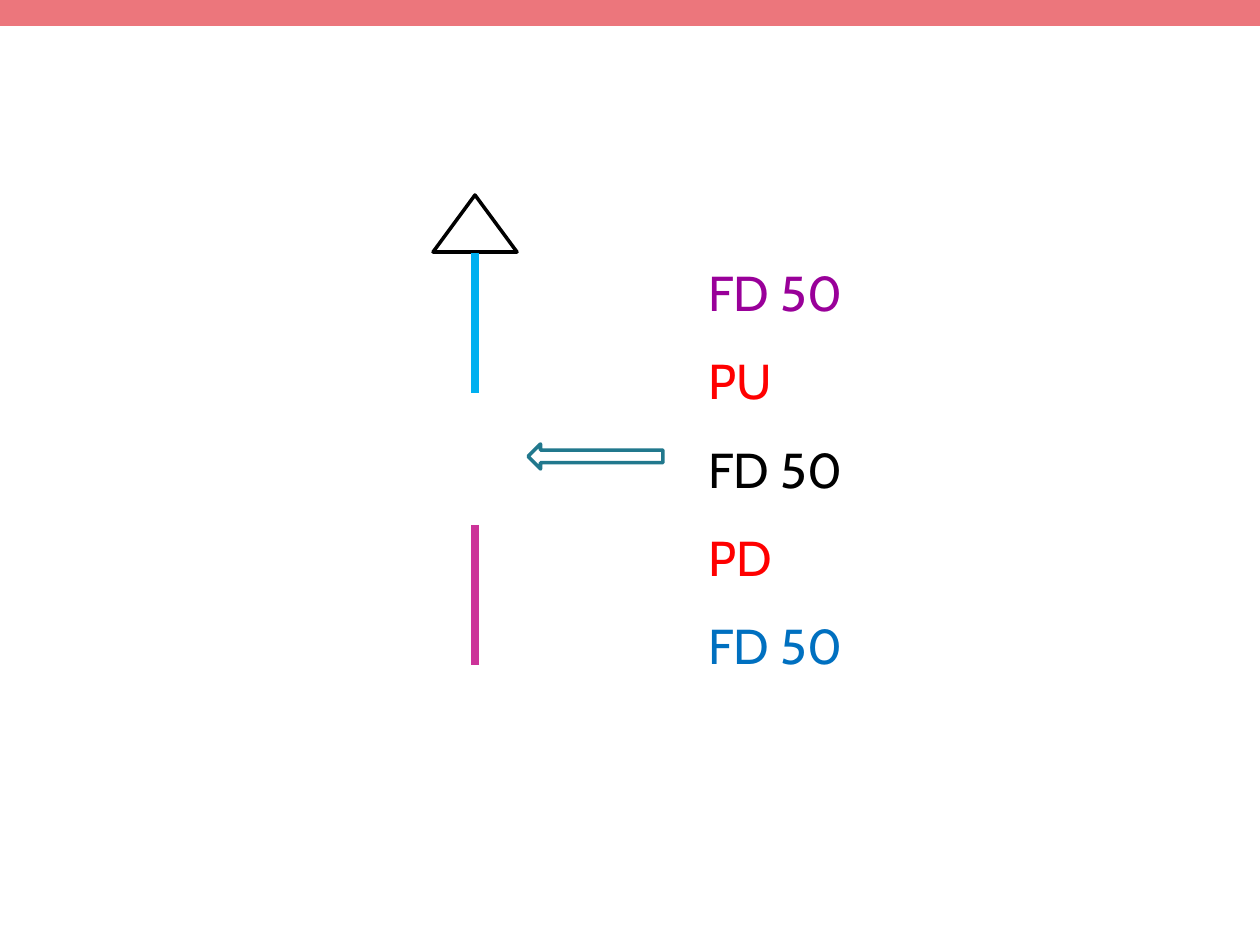
"""Build a slide of turtle pen commands beside the broken line they draw."""
from lxml import etree
from pptx import Presentation
from pptx.dml.color import RGBColor
from pptx.enum.shapes import MSO_CONNECTOR, MSO_SHAPE
from pptx.util import Emu, Pt

RECT = MSO_SHAPE.RECTANGLE
TRIANGLE = MSO_SHAPE.ISOSCELES_TRIANGLE
ARROW = MSO_SHAPE.RIGHT_ARROW
STRAIGHT = MSO_CONNECTOR.STRAIGHT
EFFECTS = "{http://schemas.openxmlformats.org/drawingml/2006/main}effectLst"
COLORS = {
    "band": "EC767C", "white": "FFFFFF", "black": "000000",
    "purple": "990099", "red": "FF0000", "blue": "0070C0",
    "cyan": "00B0F0", "pink": "CC3399", "teal": "21788D",
}


def px(n):
    return Emu(n * 914400 // 126)


def rgb(name):
    return RGBColor.from_string(COLORS[name])


prs = Presentation()
prs.slide_width, prs.slide_height = px(1260), px(945)
s = prs.slides.add_slide(prs.slide_layouts[6])

commands = [("FD 50", "purple"), ("PU", "red"), ("FD 50", "black"),
            ("PD", "red"), ("FD 50", "blue")]
tf = s.shapes.add_textbox(px(696), px(227), px(286), px(459)).text_frame
tf.word_wrap = True
for i, (text, color) in enumerate(commands):
    p = tf.add_paragraph() if i else tf.paragraphs[0]
    p.text = text
    p.line_spacing = 1.5
    p.font.name = "Cabin"
    p.font.size = Pt(28)
    p.font.color.rgb = rgb(color)

shapes = [
    (RECT, 0, 0, 1260, 26, "band", None, 0),
    (TRIANGLE, 433, 195, 84, 57, "white", "black", 0),
    (ARROW, 528, 444, 135, 25, "white", "teal", 180),
]
for kind, x, y, w, h, fill, line, angle in shapes:
    sp = s.shapes.add_shape(kind, px(x), px(y), px(w), px(h))
    sp.shadow.inherit = False
    sp.rotation = angle
    sp.fill.solid()
    sp.fill.fore_color.rgb = rgb(fill)
    if line:
        sp.line.color.rgb = rgb(line)
        sp.line.width = Pt(2)
    else:
        sp.line.fill.background()

for top, color in [(253, "cyan"), (525, "pink")]:
    ln = s.shapes.add_connector(STRAIGHT, px(475), px(top), px(475), px(top + 140))
    ln.line.color.rgb = rgb(color)
    ln.line.width = Pt(4.5)
    etree.SubElement(ln._element.spPr, EFFECTS)

prs.save("out.pptx")
